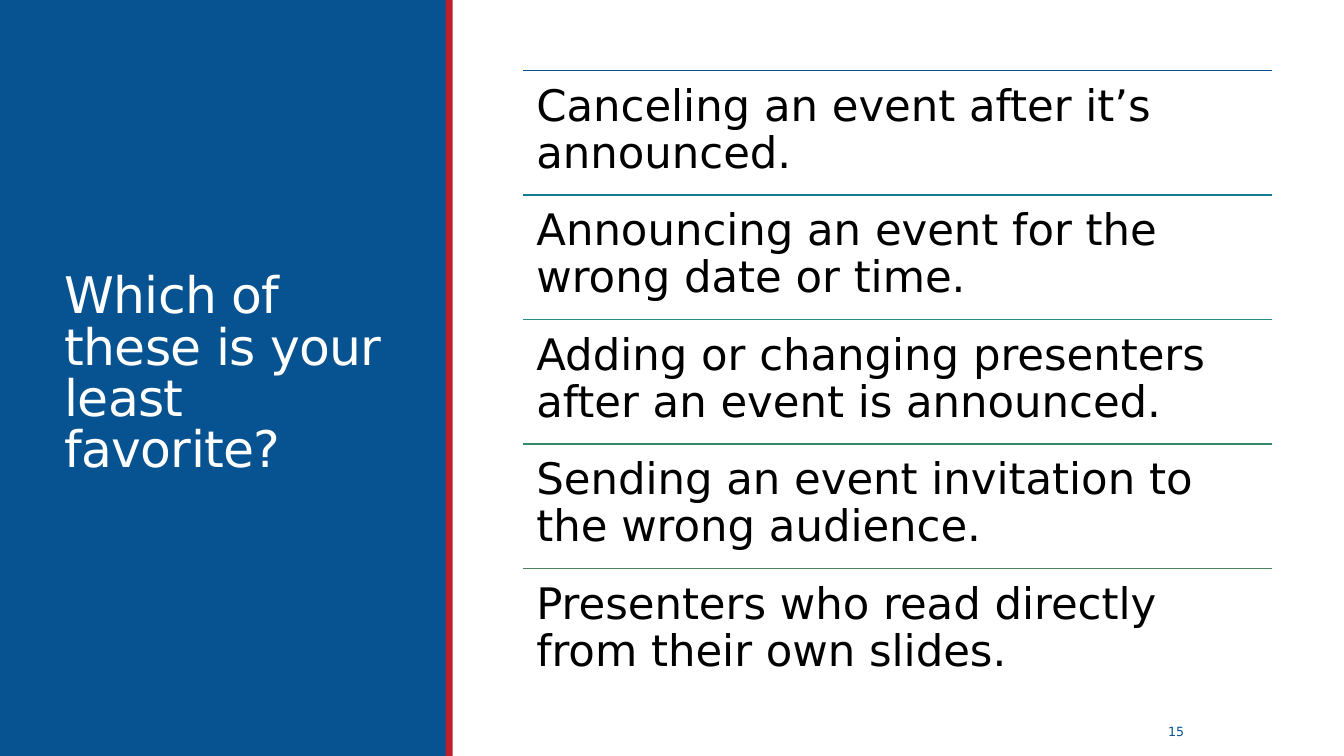
from lxml.etree import SubElement
from pptx import Presentation
from pptx.dml.color import RGBColor
from pptx.enum.shapes import MSO_CONNECTOR, MSO_SHAPE
from pptx.enum.text import MSO_ANCHOR, MSO_AUTO_SIZE, PP_ALIGN
from pptx.oxml.ns import qn
from pptx.util import Inches, Pt

COLORS = {"blue": "075290", "red": "BF1E2D", "white": "FFFFFF", "black": "000000",
          "teal": "147A90", "sea": "248D82", "green": "358968", "moss": "49825C"}
FONT = "DejaVu Sans"

# Each answer with the colour of the rule above it
ANSWERS = [
    ("Canceling an event after it’s announced.", "blue"),
    ("Announcing an event for the wrong date or time.", "teal"),
    ("Adding or changing presenters after an event is announced.", "sea"),
    ("Sending an event invitation to the wrong audience.", "green"),
    ("Presenters who read directly from their own slides.", "moss"),
]
LIST_LEFT, LIST_TOP, LIST_WIDTH, ROW_HEIGHT = 5.19, 0.7, 7.43, 1.235


def write(tf, text, size, color, align=PP_ALIGN.LEFT, line_spacing=1.0,
          anchor=MSO_ANCHOR.TOP, inset=None, tracking=None):
    """Fill a text frame; inset is in inches, tracking in points."""
    tf.word_wrap = True
    tf.auto_size = MSO_AUTO_SIZE.NONE
    tf.vertical_anchor = anchor
    if inset is not None:
        tf.margin_left = tf.margin_right = Inches(inset)
        tf.margin_top = tf.margin_bottom = Inches(inset)
    p = tf.paragraphs[0]
    p.alignment = align
    p.line_spacing = line_spacing
    r = p.add_run()
    r.text = text
    r.font.name = FONT
    r.font.size = Pt(size)
    r.font.color.rgb = RGBColor.from_string(COLORS[color])
    if tracking is not None:
        r.font._element.set("spc", str(round(tracking * 100)))


class SlideBuilder:
    def __init__(self, slide):
        self.slide = slide

    def title(self, text, left, top, width, height, **style):
        sp = self.slide.shapes.title
        sp.left, sp.top = Inches(left), Inches(top)
        sp.width, sp.height = Inches(width), Inches(height)
        write(sp.text_frame, text, **style)

    def panel(self, left, top, width, height, color):
        sp = self.slide.shapes.add_shape(
            MSO_SHAPE.RECTANGLE, Inches(left), Inches(top), Inches(width), Inches(height))
        sp.shadow.inherit = False
        sp.fill.solid()
        sp.fill.fore_color.rgb = RGBColor.from_string(COLORS[color])
        sp.line.fill.background()
        return sp

    def text(self, text, left, top, width, height, **style):
        sp = self.slide.shapes.add_textbox(
            Inches(left), Inches(top), Inches(width), Inches(height))
        write(sp.text_frame, text, **style)

    def rule(self, left, top, width, color):
        line = self.slide.shapes.add_connector(
            MSO_CONNECTOR.STRAIGHT, Inches(left), Inches(top), Inches(left + width), Inches(top))
        line.line.color.rgb = RGBColor.from_string(COLORS[color])
        line.line.width = Pt(1.25)
        SubElement(line._element.spPr, qn("a:effectLst"))

    def send_to_back(self, sp):
        self.slide.shapes._spTree.insert(2, sp._element)


def main():
    prs = Presentation()
    prs.slide_width, prs.slide_height = Inches(13.33), Inches(7.5)
    s = SlideBuilder(prs.slides.add_slide(prs.slide_layouts[5]))

    s.send_to_back(s.panel(0, 0, 4.43, 7.5, "blue"))
    s.title("Which of these is your least favorite?", 0.54, 0.57, 3.37, 6.31,
            size=36, color="white", line_spacing=0.85,
            anchor=MSO_ANCHOR.MIDDLE, tracking=-0.5)
    s.panel(4.42, 0, 0.07, 7.5, "red")
    s.text("15", 11.07, 7.06, 1.19, 0.4, size=9, color="blue",
           align=PP_ALIGN.CENTER, anchor=MSO_ANCHOR.MIDDLE)

    for i, (answer, color) in enumerate(ANSWERS):
        top = LIST_TOP + i * ROW_HEIGHT
        s.rule(LIST_LEFT, top, LIST_WIDTH, color)
        s.text(answer, LIST_LEFT, top, LIST_WIDTH, ROW_HEIGHT,
               size=31, color="black", line_spacing=0.9, inset=0.13)

    prs.save("out.pptx")


if __name__ == "__main__":
    main()
